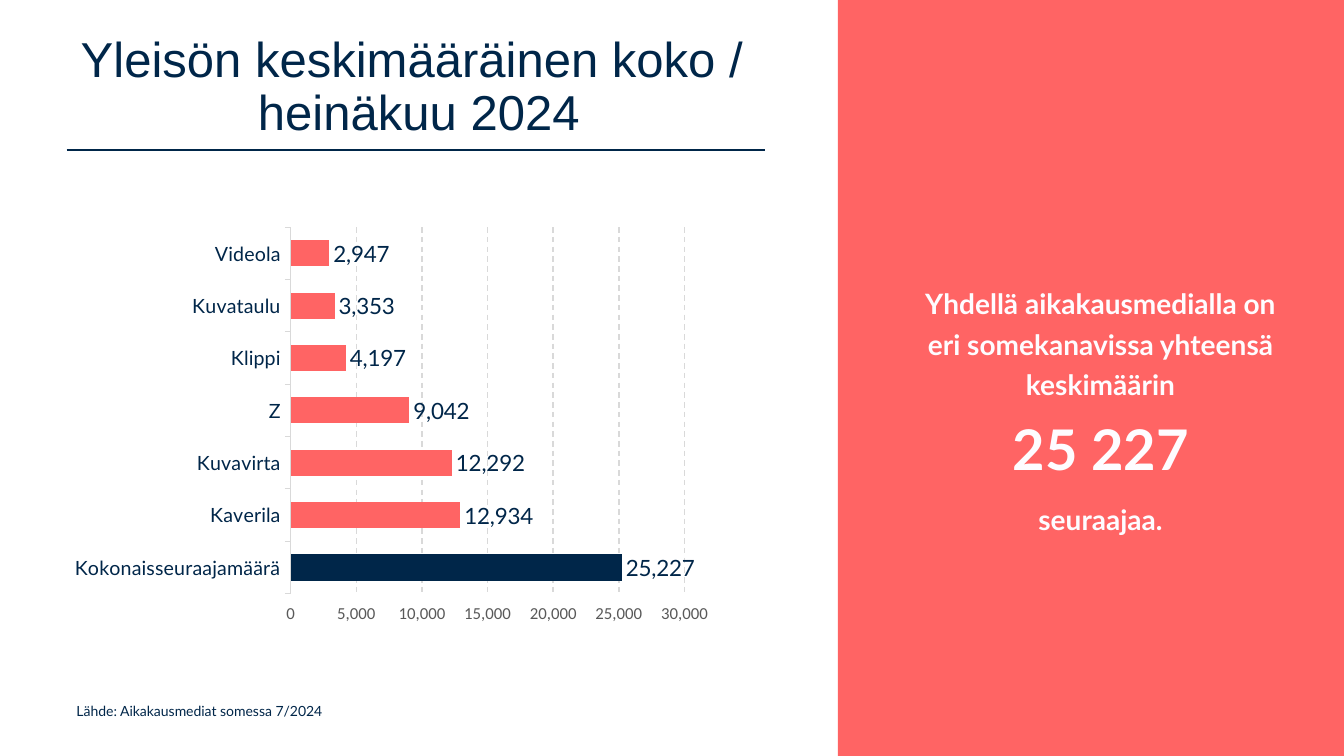
from lxml import etree
from pptx import Presentation
from pptx.chart.data import CategoryChartData as ChartData
from pptx.dml.color import RGBColor
from pptx.enum.chart import XL_CHART_TYPE as Kind, XL_LABEL_POSITION as Spot
from pptx.enum.chart import XL_TICK_MARK as Tick
from pptx.enum.dml import MSO_LINE as Dash
from pptx.enum.shapes import MSO_CONNECTOR as Link, MSO_SHAPE as Form
from pptx.enum.text import MSO_ANCHOR as Anchor, MSO_AUTO_SIZE as Fit, PP_ALIGN as Align
from pptx.oxml import parse_xml
from pptx.oxml.ns import nsdecls, qn
from pptx.util import Inches, Pt

NAVY, CORAL, CREAM = "002649", "FF6464", "FEFCFF"
GRID, GREY = "D9D9D9", "595959"
WIDE, HIGH, SPLIT = 13.33, 7.5, 8.31
TITLE = "Yleisön keskimääräinen koko / \vheinäkuu 2024"
SOURCE = "Lähde: Aikakausmediat somessa 7/2024"
LEAD = "Yhdellä aikakausmedialla on eri somekanavissa yhteensä keskimäärin"
TOTAL, TAIL = "25 227", "seuraajaa."
READERS = {
    "Kokonaisseuraajamäärä": 25227,
    "Kaverila": 12934,
    "Kuvavirta": 12292,
    "Z": 9042,
    "Klippi": 4197,
    "Kuvataulu": 3353,
    "Videola": 2947,
}
PLOT = {"x": 0.347, "y": 0.086, "w": 0.47, "h": 0.838}


def tint(code):
    return RGBColor.from_string(code)


def style(font, size, color, name="Lato", bold=False):
    font.size, font.name, font.bold = Pt(size), name, bold
    font.color.rgb = tint(color)


def box(slide, x, y, w, h, anchor=Anchor.TOP):
    frame = slide.shapes.add_textbox(Inches(x), Inches(y), Inches(w), Inches(h)).text_frame
    frame.word_wrap = True
    frame.vertical_anchor = anchor
    return frame


def add_panel(slide):
    panel = slide.shapes.add_shape(
        Form.RECTANGLE, Inches(SPLIT), 0, Inches(WIDE - SPLIT), Inches(HIGH))
    panel.shadow.inherit = False
    panel.fill.solid()
    panel.fill.fore_color.rgb = tint(CORAL)
    panel.line.fill.background()


def add_rule(slide):
    rule = slide.shapes.add_connector(
        Link.STRAIGHT, Inches(0.66), Inches(1.49), Inches(7.59), Inches(1.49))
    rule.line.color.rgb = tint(NAVY)
    rule.line.width = Pt(1)
    etree.SubElement(rule._element.spPr, qn("a:effectLst"))


def add_texts(slide):
    note = box(slide, 0.66, 6.92, 6.58, 0.44)
    note.auto_size = Fit.SHAPE_TO_FIT_TEXT
    note.text = SOURCE
    style(note.paragraphs[0].font, 10, NAVY)

    head = box(slide, 0, 0.25, SPLIT, 1.25, Anchor.MIDDLE)
    head.text = TITLE
    para = head.paragraphs[0]
    para.alignment, para.line_spacing = Align.CENTER, 0.9
    style(para.font, 35, NAVY, "Arial")

    body = box(slide, 9.04, 1.5, 3.75, 5.1, Anchor.MIDDLE)
    body.text = LEAD + "\v"
    total = body.paragraphs[0].add_run()
    total.text = TOTAL
    total.font.size = Pt(40)
    tail = body.add_paragraph()
    tail.text = TAIL
    tail.space_before = Pt(10)
    for para in body.paragraphs:
        para.alignment, para.line_spacing = Align.CENTER, 1.2
        style(para.font, 20, CREAM, bold=True)


def add_bars(slide):
    data = ChartData(number_format="#,##0")
    data.categories = list(READERS)
    data.add_series("Series 1", list(READERS.values()))
    chart = slide.shapes.add_chart(
        Kind.BAR_CLUSTERED, 0, Inches(1.88), Inches(SPLIT), Inches(4.34), data).chart
    chart.has_legend = chart.has_title = False
    style(chart.font, 10, "000000", "Calibri")

    names = chart.category_axis
    names.major_tick_mark = Tick.OUTSIDE
    names.format.line.color.rgb = tint(GRID)
    names.format.line.width = Pt(0.75)
    style(names.tick_labels.font, 14, NAVY)

    scale = chart.value_axis
    scale.minimum_scale, scale.maximum_scale, scale.major_unit = 0, 30000, 5000
    scale.major_tick_mark = Tick.OUTSIDE
    scale.format.line.fill.background()
    scale.tick_labels.number_format = "#,##0"
    scale.tick_labels.number_format_is_linked = False
    style(scale.tick_labels.font, 12, GREY, "Calibri")
    grid = scale.major_gridlines.format.line
    grid.color.rgb = tint(GRID)
    grid.width, grid.dash_style = Pt(1), Dash.DASH

    plot = chart.plots[0]
    plot.gap_width, plot.vary_by_categories = 100, False
    bars = plot.series[0]
    for part, color in ((bars, CORAL), (bars.points[0], NAVY)):
        part.format.fill.solid()
        part.format.fill.fore_color.rgb = tint(color)
    marks = bars.data_labels
    marks.show_value, marks.position = True, Spot.OUTSIDE_END
    marks.number_format, marks.number_format_is_linked = "#,##0", False
    style(marks.font, 16, NAVY)

    area = chart._chartSpace.chart.plotArea
    for old in area.findall(qn("c:layout")):
        area.remove(old)
    modes = '<c:layoutTarget val="inner"/><c:xMode val="edge"/><c:yMode val="edge"/>'
    sizes = "".join(f'<c:{key} val="{val}"/>' for key, val in PLOT.items())
    area.insert(0, parse_xml(
        f'<c:layout {nsdecls("c")}><c:manualLayout>{modes}{sizes}</c:manualLayout></c:layout>'))


def main():
    deck = Presentation()
    deck.slide_width, deck.slide_height = Inches(WIDE), Inches(HIGH)
    slide = deck.slides.add_slide(deck.slide_layouts[6])
    for draw in (add_panel, add_rule, add_texts, add_bars):
        draw(slide)
    deck.save("out.pptx")


if __name__ == "__main__":
    main()
